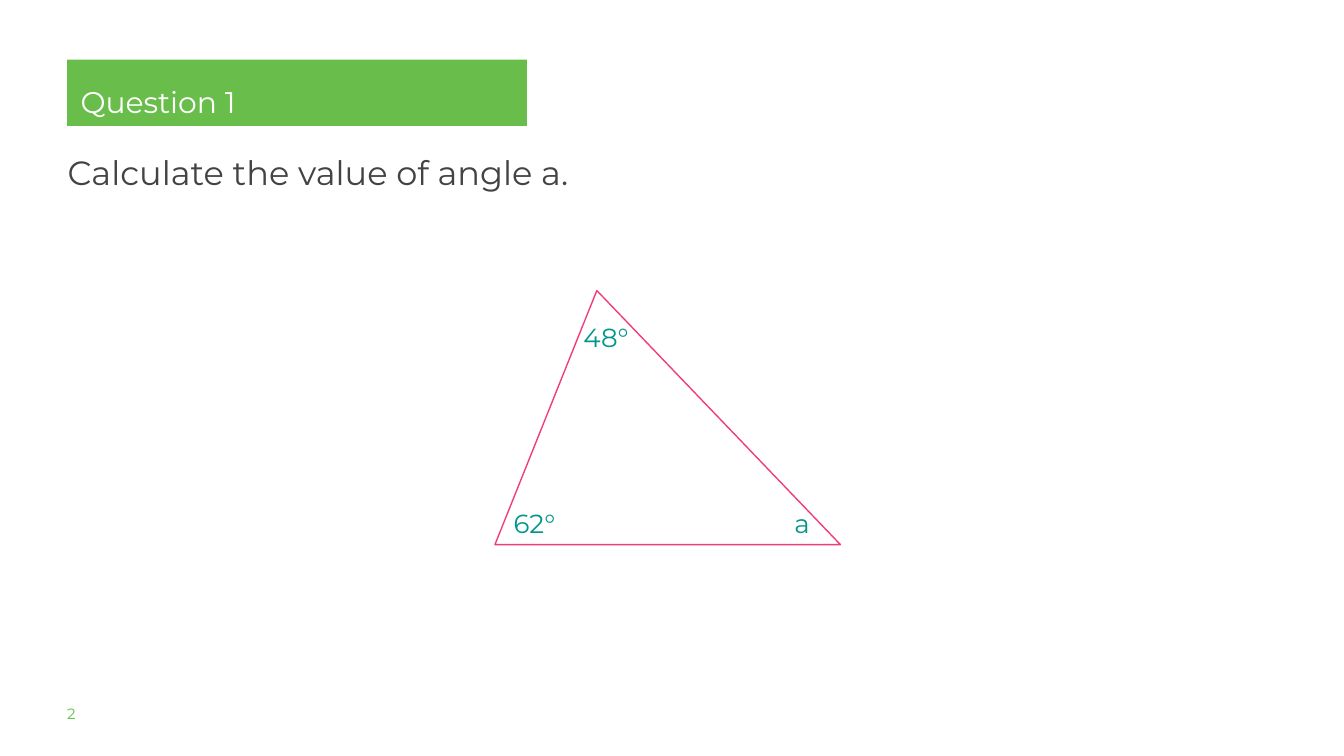
from lxml.etree import SubElement
from pptx import Presentation
from pptx.dml.color import RGBColor
from pptx.enum.shapes import MSO_SHAPE
from pptx.enum.text import MSO_ANCHOR, MSO_AUTO_SIZE, PP_ALIGN
from pptx.oxml.ns import qn
from pptx.util import Inches, Pt

WHITE = RGBColor(0xFF, 0xFF, 0xFF)
GREEN = RGBColor(0x69, 0xBE, 0x4B)
NUMBER_GREEN = RGBColor(0x65, 0xBE, 0x4B)
GRAY = RGBColor(0x43, 0x43, 0x43)
PINK = RGBColor(0xF0, 0x3C, 0x78)
TEAL = RGBColor(0x00, 0x96, 0x8C)

FONT = "Montserrat"
WIDTH = Inches(10)
HEIGHT = WIDTH * 9 // 16
CELL = WIDTH // 100
INSET = Inches(0.1)


def place(sp, box):
    sp.left, sp.top, sp.width, sp.height = (int(n * CELL) for n in box)


def write(sp, text, size, color, inset=INSET, spacing=1.0):
    tf = sp.text_frame
    tf.word_wrap = True
    tf.auto_size = MSO_AUTO_SIZE.NONE
    tf.vertical_anchor = MSO_ANCHOR.TOP
    tf.margin_left = tf.margin_top = tf.margin_right = tf.margin_bottom = inset
    p = tf.paragraphs[0]
    p.alignment = PP_ALIGN.LEFT
    p.line_spacing = spacing
    p.space_before = Pt(0)
    r = p.add_run()
    r.text = text
    r.font.name = FONT
    r.font.size = Pt(size)
    r.font.color.rgb = color


def add_label(s, box, text, size, color, inset=INSET):
    sp = s.shapes.add_textbox(0, 0, 0, 0)
    place(sp, box)
    write(sp, text, size, color, inset)


def fill_title(s, box, text):
    sp = s.shapes.title
    place(sp, box)
    sp.fill.solid()
    sp.fill.fore_color.rgb = GREEN
    write(sp, text, 16, WHITE, spacing=1.3)


def fill_prompt(s, box, text):
    sp = s.placeholders[1]
    place(sp, box)
    pPr = sp.text_frame.paragraphs[0]._p.get_or_add_pPr()
    pPr.set("marL", "0")
    pPr.set("indent", "0")
    SubElement(pPr, qn("a:buNone"))
    write(sp, text, 18, GRAY)


def add_triangle(s, box, apex, angles):
    sp = s.shapes.add_shape(MSO_SHAPE.ISOSCELES_TRIANGLE, 0, 0, 0, 0)
    place(sp, box)
    sp.adjustments[0] = apex
    sp.shadow.inherit = False
    sp.fill.solid()
    sp.fill.fore_color.rgb = WHITE
    sp.line.color.rgb = PINK
    sp.line.width = Pt(0.75)
    left, top, _, _ = box
    for text, dx, dy in angles:
        add_label(s, (left + dx, top + dy, 7.2, 3.9), text, 14, TEAL)


def main():
    prs = Presentation()
    prs.slide_width, prs.slide_height = WIDTH, HEIGHT
    s = prs.slides.add_slide(prs.slide_layouts[1])
    fill_title(s, (5, 4.43, 34.2, 4.95), "Question 1")
    add_label(s, (5, 52.44, 7.9, 2), "2", 8, NUMBER_GREEN, inset=0)
    fill_prompt(s, (4.03, 10.3, 50.6, 6.3), "Calculate the value of angle a.")
    angles = [("48°", 5.6, 1.3), ("62°", 0.4, 15.1), ("a", 21.3, 15.1)]
    add_triangle(s, (36.83, 21.62, 25.7, 18.9), 0.295, angles)
    prs.save("out.pptx")


if __name__ == "__main__":
    main()
